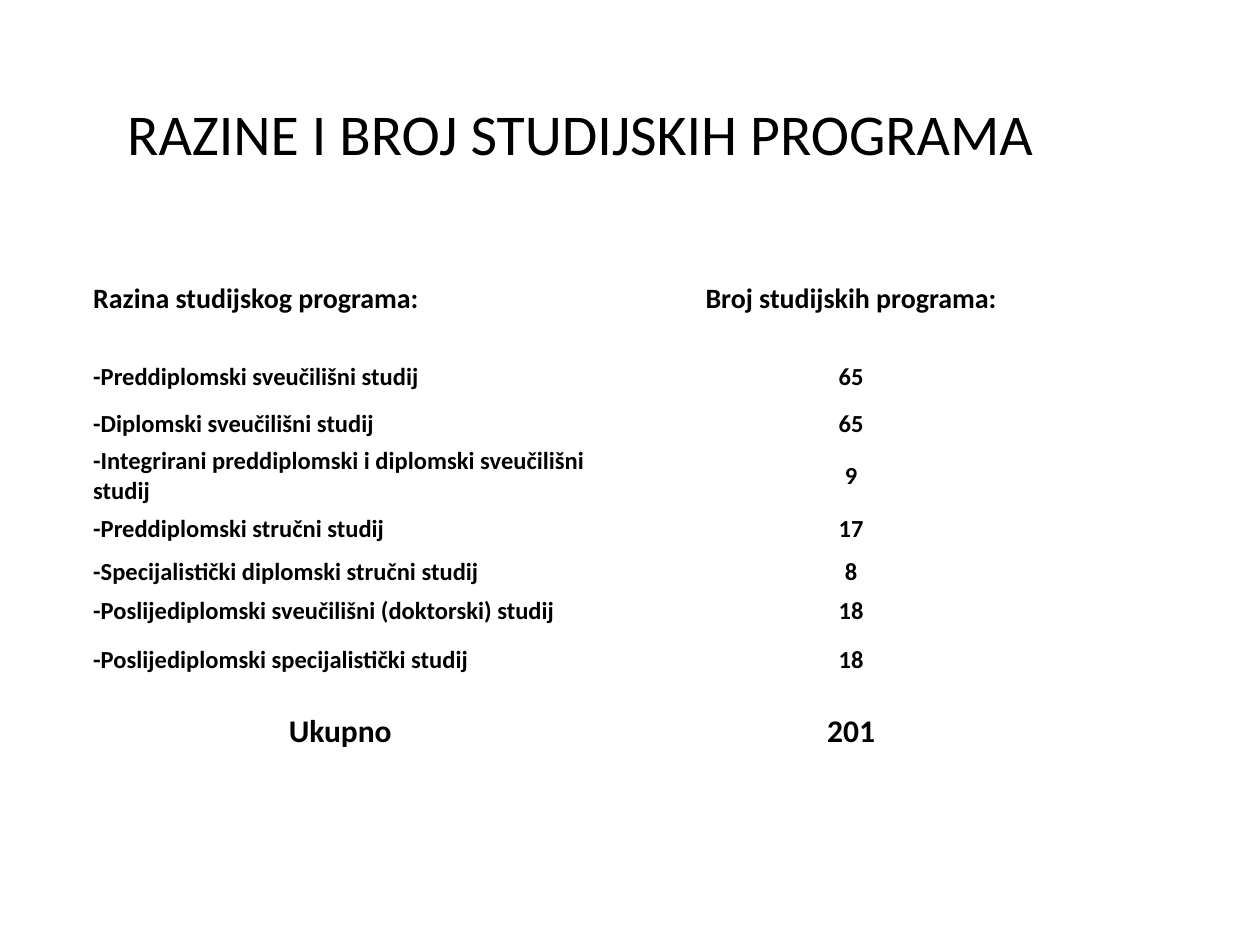
"""Build a slide with a table of study programme levels and their counts."""
import pptx
import pptx.dml.color
import pptx.enum.text
import pptx.util

Inches = pptx.util.Inches
Pt = pptx.util.Pt
ALIGN = pptx.enum.text.PP_ALIGN
MIDDLE = pptx.enum.text.MSO_ANCHOR.MIDDLE
BLACK = pptx.dml.color.RGBColor(0, 0, 0)
WHITE = pptx.dml.color.RGBColor(255, 255, 255)
FONT = "Calibri"

COL_WIDTHS = [4.06, 4.05]
ROW_HEIGHTS = [0.99, 0.39, 0.35, 0.42, 0.37, 0.31, 0.31, 0.47, 0.52]
HEADER = ("Razina studijskog programa:", "Broj studijskih programa:")
PROGRAMMES = [
    ("-Preddiplomski sveučilišni studij", "65"),
    ("-Diplomski sveučilišni studij", "65"),
    ("-Integrirani preddiplomski i diplomski sveučilišni studij", "9"),
    ("-Preddiplomski stručni studij", "17"),
    ("-Specijalistički diplomski stručni studij", "8"),
    ("-Poslijediplomski sveučilišni (doktorski) studij", "18"),
    ("-Poslijediplomski specijalistički studij", "18"),
]
TOTAL = ("Ukupno", "201")


def set_text(tf, text, size, bold=False, align=ALIGN.LEFT, spacing=1.0):
    tf.text = text
    p = tf.paragraphs[0]
    p.alignment = align
    p.line_spacing = spacing
    font = p.runs[0].font
    font.name = FONT
    font.size = Pt(size)
    font.bold = bold
    font.color.rgb = BLACK


def add_title(s, text):
    sp = s.shapes.title
    sp.left, sp.top = Inches(0.91), Inches(0.36)
    sp.width, sp.height = Inches(8.62), Inches(1.45)
    sp.text_frame.vertical_anchor = MIDDLE
    set_text(sp.text_frame, text, 33, spacing=0.9)


def fill_row(row, texts, size, aligns=(ALIGN.LEFT, ALIGN.CENTER), spacing=1.0):
    for cell, text, align in zip(row.cells, texts, aligns):
        cell.fill.solid()
        cell.fill.fore_color.rgb = WHITE
        cell.vertical_anchor = MIDDLE
        cell.margin_left = cell.margin_right = Inches(0.07)
        cell.margin_top = cell.margin_bottom = 0
        set_text(cell.text_frame, text, size, True, align, spacing)


def add_programme_table(s):
    table = s.shapes.add_table(
        len(ROW_HEIGHTS), len(COL_WIDTHS), Inches(0.67), Inches(1.81),
        Inches(sum(COL_WIDTHS)), Inches(sum(ROW_HEIGHTS))).table
    for column, width in zip(table.columns, COL_WIDTHS):
        column.width = Inches(width)
    rows = list(table.rows)
    for row, height in zip(rows, ROW_HEIGHTS):
        row.height = Inches(height)
    fill_row(rows[0], HEADER, 16, spacing=1.5)
    for row, programme in zip(rows[1:-1], PROGRAMMES):
        fill_row(row, programme, 14)
    fill_row(rows[-1], TOTAL, 18, (ALIGN.CENTER, ALIGN.CENTER), 1.5)


def main():
    prs = pptx.Presentation()
    prs.slide_width, prs.slide_height = Inches(10), Inches(7.5)
    s = prs.slides.add_slide(prs.slide_layouts[5])
    add_title(s, "RAZINE I BROJ STUDIJSKIH PROGRAMA")
    add_programme_table(s)
    prs.save("out.pptx")


if __name__ == "__main__":
    main()
